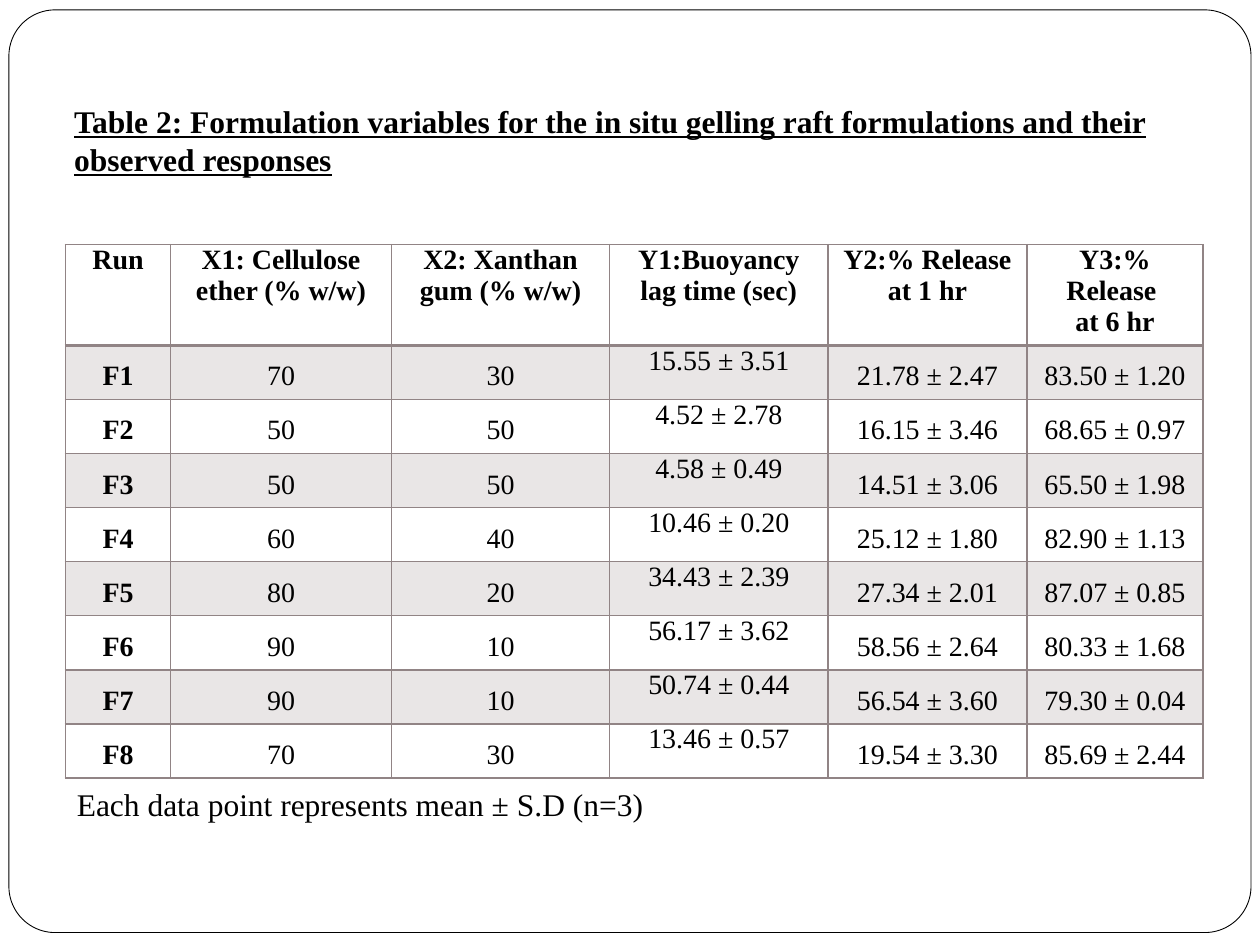
from dataclasses import dataclass

from lxml.etree import SubElement
from pptx import Presentation
from pptx.dml.color import RGBColor as Rgb
from pptx.enum.shapes import MSO_SHAPE as Shape
from pptx.enum.text import MSO_ANCHOR as Anchor, MSO_AUTO_SIZE as Fit, PP_ALIGN as Align
from pptx.oxml.ns import qn
from pptx.util import Cm, Pt


@dataclass(frozen=True)
class Theme:
    """Colours, font and type sizes of the slide."""
    font: str = "Times New Roman"
    ink: str = "000000"
    paper: str = "FFFFFF"
    grid: str = "918485"
    tint: int = 20
    large: int = 18
    small: int = 16


THEME = Theme()
WIDTHS = (2.12, 4.45, 4.4, 4.4, 4.01, 3.55)
HEADS = (
    "Run",
    "X1: Cellulose ether (% w/w)",
    "X2: Xanthan gum (% w/w)",
    "Y1:Buoyancy lag time (sec)",
    "Y2:% Release\nat 1 hr",
    "Y3:% Release \nat 6 hr",
)
RUNS = (
    ("F1", "70", "30", "15.55 ± 3.51", "21.78 ± 2.47", "83.50 ± 1.20"),
    ("F2", "50", "50", "4.52 ± 2.78", "16.15 ± 3.46", "68.65 ± 0.97"),
    ("F3", "50", "50", "4.58 ± 0.49", "14.51 ± 3.06", "65.50 ± 1.98"),
    ("F4", "60", "40", "10.46 ± 0.20", "25.12 ± 1.80", "82.90 ± 1.13"),
    ("F5", "80", "20", "34.43 ± 2.39", "27.34 ± 2.01", "87.07 ± 0.85"),
    ("F6", "90", "10", "56.17 ± 3.62", "58.56 ± 2.64", "80.33 ± 1.68"),
    ("F7", "90", "10", "50.74 ± 0.44", "56.54 ± 3.60", "79.30 ± 0.04"),
    ("F8", "70", "30", "13.46 ± 0.57", "19.54 ± 3.30", "85.69 ± 2.44"),
)
LAG = 3


def write(frame, text, size, align, bold=False, space=1.0):
    """Fill a text frame and format each of its paragraphs."""
    frame.text = text
    frame.word_wrap = True
    for para in frame.paragraphs:
        para.alignment = align
        para.line_spacing = space
        font = para.font
        font.name, font.size, font.bold = THEME.font, Pt(size), bold
        font.color.rgb = Rgb.from_string(THEME.ink)


def add_frame(slide):
    """Put the rounded frame behind the title."""
    frame = slide.shapes.add_shape(
        Shape.ROUNDED_RECTANGLE, Cm(0.18), Cm(0.2), Cm(25.04), Cm(18.6))
    frame.adjustments[0] = 0.05
    frame.shadow.inherit = False
    frame.fill.solid()
    frame.fill.fore_color.rgb = Rgb.from_string(THEME.paper)
    frame.line.color.rgb = Rgb.from_string(THEME.ink)
    frame.line.width = Pt(0.5)
    slide.shapes.title.element.addprevious(frame.element)


def set_title(slide, text):
    """Place and format the underlined title."""
    title = slide.shapes.title
    title.left, title.top = Cm(1.24), Cm(1.93)
    title.width, title.height = Cm(23.8), Cm(2.95)
    frame = title.text_frame
    write(frame, text, THEME.large, Align.LEFT, bold=True)
    frame.paragraphs[0].font.underline = True
    frame.vertical_anchor = Anchor.TOP
    frame.auto_size = Fit.NONE


def add_note(slide, text):
    """Add the note under the table."""
    box = slide.shapes.add_textbox(Cm(1.3), Cm(15.32), Cm(12.4), Cm(1.32))
    write(box.text_frame, text, THEME.large, Align.JUSTIFY, space=1.5)


def set_edges(cell, **widths):
    """Draw the four borders of a cell, one point wide unless given."""
    props = cell._tc.get_or_add_tcPr()
    for side in "LRTB":
        width = Pt(widths.get(side, 1))
        line = SubElement(props, qn(f"a:ln{side}"), w=str(width))
        fill = SubElement(line, qn("a:solidFill"))
        SubElement(fill, qn("a:srgbClr"), val=THEME.grid)


def shade(cell, tinted):
    """Give a cell a see-through tint or no fill."""
    if not tinted:
        cell.fill.background()
        return
    cell.fill.solid()
    cell.fill.fore_color.rgb = Rgb.from_string(THEME.grid)
    color = cell._tc.tcPr.find(qn("a:solidFill"))[0]
    SubElement(color, qn("a:alpha"), val=str(THEME.tint * 1000))


def add_grid(slide):
    """Add the table of runs and responses."""
    rows = (HEADS, *RUNS)
    heights = [1.65] + [1.09] * len(RUNS)
    table = slide.shapes.add_table(
        len(rows), len(HEADS), Cm(1.32), Cm(4.93),
        Cm(sum(WIDTHS)), Cm(sum(heights))).table
    for col, width in zip(table.columns, WIDTHS):
        col.width = Cm(width)
    for row, height in zip(table.rows, heights):
        row.height = Cm(height)
    for r, row in enumerate(rows):
        for c, text in enumerate(row):
            cell = table.cell(r, c)
            cell.margin_left = cell.margin_right = Cm(0.18)
            cell.margin_top = cell.margin_bottom = 0
            space = 1.0 if r == 0 or c == LAG else 1.5
            write(cell.text_frame, text, THEME.small, Align.CENTER,
                  bold=r == 0 or c == 0, space=space)
            set_edges(cell, T=2 if r == 1 else 1, B=2 if r == 0 else 1)
            shade(cell, r % 2 == 1)


def main():
    """Build the slide and save it."""
    deck = Presentation()
    deck.slide_width, deck.slide_height = Cm(25.4), Cm(19.05)
    slide = deck.slides.add_slide(deck.slide_layouts[5])
    add_frame(slide)
    set_title(slide, "Table 2: Formulation variables for the in situ gelling "
                     "raft formulations and their observed responses")
    add_note(slide, "Each data point represents mean ± S.D (n=3)")
    add_grid(slide)
    deck.save("out.pptx")


if __name__ == "__main__":
    main()
